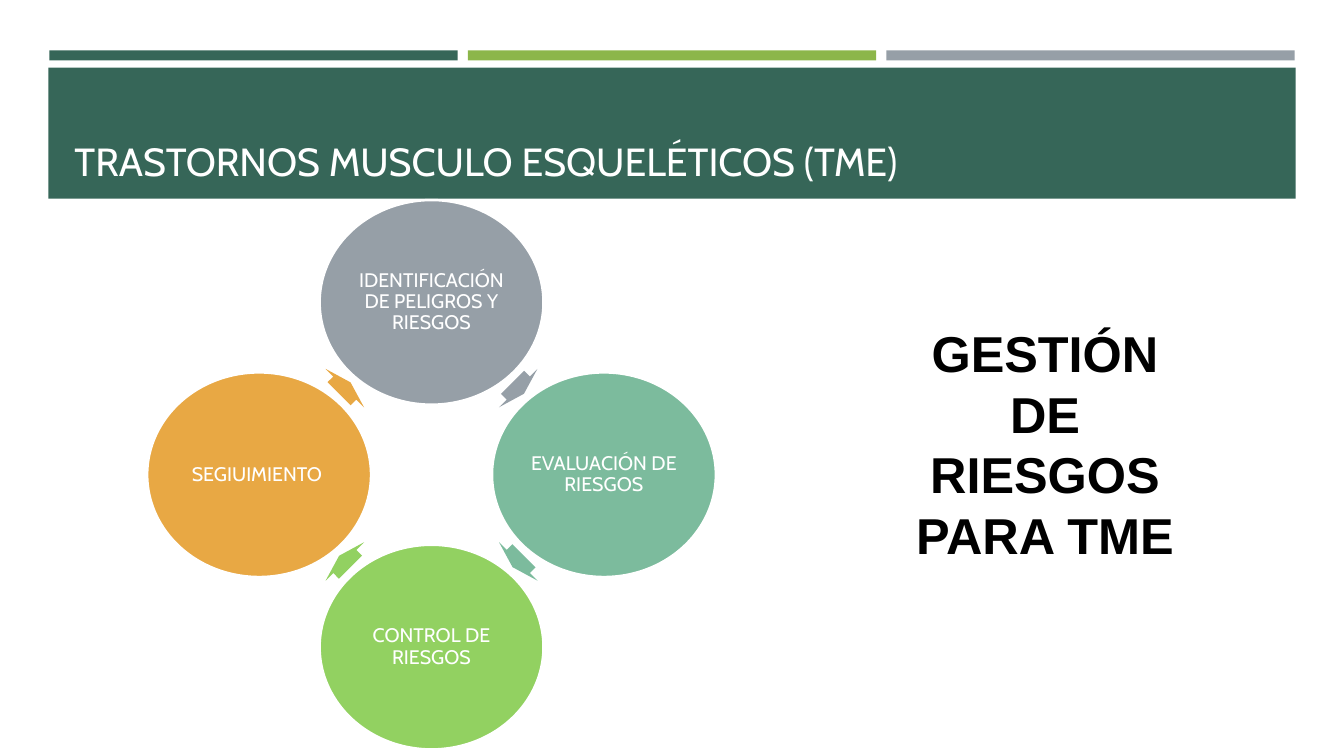
from pptx import Presentation
from pptx.dml.color import RGBColor
from pptx.enum.shapes import MSO_SHAPE
from pptx.enum.text import MSO_ANCHOR, PP_ALIGN
from pptx.util import Pt

RECTANGLE = MSO_SHAPE.RECTANGLE
ELLIPSE = MSO_SHAPE.OVAL
ARROW = MSO_SHAPE.RIGHT_ARROW
TOP, MIDDLE, BOTTOM = MSO_ANCHOR.TOP, MSO_ANCHOR.MIDDLE, MSO_ANCHOR.BOTTOM
LEFT, CENTER = PP_ALIGN.LEFT, PP_ALIGN.CENTER

EMU_PER_PX = 9144
COLORS = {
    "pine": "366658",
    "olive": "8CB64A",
    "gray": "969FA7",
    "mint": "7CBB9D",
    "lime": "92D161",
    "amber": "E8A844",
    "white": "FFFFFF",
    "black": "000000",
}
STEPS = [
    ("IDENTIFICACIÓN DE PELIGROS Y RIESGOS", "gray", (0, -1), (1, -1)),
    ("EVALUACIÓN DE RIESGOS", "mint", (1, 0), (1, 1)),
    ("CONTROL DE RIESGOS", "lime", (0, 1), (-1, 1)),
    ("SEGIUIMIENTO ", "amber", (-1, 0), (-1, -1)),
]
CYCLE_CENTER = (428, 471)
STEP_OFFSET, ARROW_OFFSET = 171, 86
STEP_SIZE, ARROW_SIZE = (222, 203), (16, 54)


def px(*lengths):
    """Turn pixel lengths into EMU."""
    return [round(length * EMU_PER_PX) for length in lengths]


def color(name):
    """Return the named colour."""
    return RGBColor.from_string(COLORS[name])


def add_filled(slide, kind, box, fill, line=None):
    """Add a flat preset shape with an optional outline."""
    shape = slide.shapes.add_shape(kind, *px(*box))
    shape.shadow.inherit = False
    shape.fill.solid()
    shape.fill.fore_color.rgb = color(fill)
    if line:
        shape.line.color.rgb = color(line)
        shape.line.width = Pt(1.75)
    else:
        shape.line.fill.background()
    return shape


def write_text(shape, text, *, size, font="Cabin", fill="white", bold=False,
               align=LEFT, anchor=TOP, spacing=1.0, inset=None):
    """Write one formatted paragraph into a shape."""
    frame = shape.text_frame
    frame.word_wrap = True
    frame.vertical_anchor = anchor
    if inset is not None:
        margin = px(inset)[0]
        frame.margin_left = frame.margin_right = margin
        frame.margin_top = frame.margin_bottom = margin
    paragraph = frame.paragraphs[0]
    paragraph.alignment = align
    paragraph.line_spacing = spacing
    run = paragraph.add_run()
    run.text = text
    run.font.name = font
    run.font.size = Pt(size)
    run.font.bold = bold
    run.font.color.rgb = color(fill)


def add_header(slide):
    """Add the three accent bars and the title band."""
    for index, fill in enumerate(("pine", "olive", "gray")):
        add_filled(slide, RECTANGLE, (49 + 415 * index, 50, 405, 10), fill)
    add_filled(slide, RECTANGLE, (48, 67, 1237, 130), "pine")
    title = slide.shapes.add_textbox(*px(64, 77, 1206, 111))
    write_text(title, "TRASTORNOS MUSCULO ESQUELÉTICOS (TME)", size=28, anchor=BOTTOM)


def box_from_center(direction, offset, size):
    """Return a box placed around the cycle's centre."""
    corner = [middle + step * offset - length / 2
              for middle, step, length in zip(CYCLE_CENTER, direction, size)]
    return (*corner, *size)


def add_cycle(slide):
    """Add the four steps of the cycle and the arrows between them."""
    for index, (label, fill, step_side, arrow_side) in enumerate(STEPS):
        step = add_filled(slide, ELLIPSE,
                          box_from_center(step_side, STEP_OFFSET, STEP_SIZE), fill, "white")
        write_text(step, label, size=14, align=CENTER, anchor=MIDDLE, spacing=0.9, inset=2)
        arrow = add_filled(slide, ARROW,
                           box_from_center(arrow_side, ARROW_OFFSET, ARROW_SIZE), fill)
        arrow.adjustments[0] = 0.6
        arrow.adjustments[1] = 0.5
        arrow.rotation = 45 + 90 * index


def main():
    """Build and save the slide."""
    presentation = Presentation()
    presentation.slide_width, presentation.slide_height = px(1333, 750)
    slide = presentation.slides.add_slide(presentation.slide_layouts[6])
    add_header(slide)
    add_cycle(slide)
    message = slide.shapes.add_textbox(*px(893, 315, 287, 252))
    write_text(message, "GESTIÓN DE RIESGOS PARA TME", size=36, font="Arial",
               fill="black", bold=True, align=CENTER)
    presentation.save("out.pptx")


if __name__ == "__main__":
    main()
